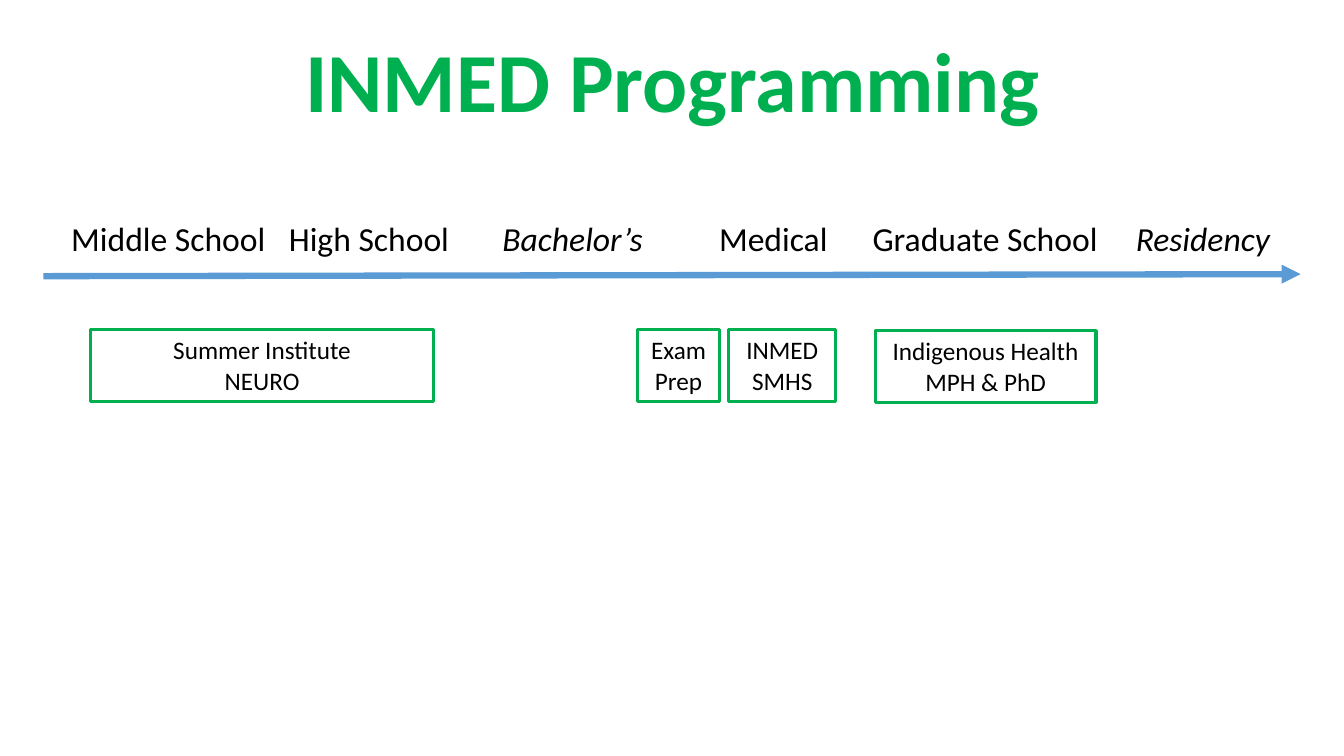
"""Build the INMED programming timeline slide."""
from dataclasses import dataclass

from lxml import etree
from pptx import Presentation
from pptx.dml.color import RGBColor
from pptx.enum.shapes import MSO_CONNECTOR
from pptx.enum.text import MSO_ANCHOR, MSO_AUTO_SIZE, PP_ALIGN
from pptx.oxml.ns import qn
from pptx.util import Inches, Pt

LINE = MSO_CONNECTOR.STRAIGHT
BASE = MSO_ANCHOR.BOTTOM
FIXED, GROW = MSO_AUTO_SIZE.NONE, MSO_AUTO_SIZE.SHAPE_TO_FIT_TEXT
MID = PP_ALIGN.CENTER


@dataclass(frozen=True)
class Theme:
    font: str = "Calibri"
    green: RGBColor = RGBColor(0x00, 0xB0, 0x50)
    blue: RGBColor = RGBColor(0x5B, 0x9B, 0xD5)
    black: RGBColor = RGBColor(0, 0, 0)
    head: Pt = Pt(60)
    stage: Pt = Pt(24)
    label: Pt = Pt(18)


theme = Theme()


def style(frame, size, color, bold=False, slant=False):
    for para in frame.paragraphs:
        para.alignment = MID
        for run in para.runs:
            run.font.name = theme.font
            run.font.size = size
            run.font.color.rgb = color
            run.font.bold = bold
            run.font.italic = slant


def write(text, left, top, width, height):
    box = slide.shapes.add_textbox(
        Inches(left), Inches(top), Inches(width), Inches(height))
    box.text_frame.text = text
    box.text_frame.word_wrap = True
    return box


deck = Presentation()
deck.slide_width, deck.slide_height = Inches(13.33), Inches(7.5)
slide = deck.slides.add_slide(deck.slide_layouts[5])

title = slide.shapes.title
title.left, title.top = Inches(1.67), Inches(0.23)
title.width, title.height = Inches(10), Inches(1.12)
frame = title.text_frame
frame.text = "INMED Programming"
frame.auto_size = FIXED
frame.vertical_anchor = BASE
frame.paragraphs[0].line_spacing = 0.9
style(frame, theme.head, theme.green, bold=True)

stages = [
    ("Middle School", 1.67, False),
    ("High School", 3.66, False),
    ("Bachelor’s", 5.68, True),
    ("Medical", 7.67, False),
    ("Graduate School", 9.77, False),
    ("Residency", 11.93, True),
]
span = 2.5
for name, center, slant in stages:
    frame = write(name, center - span / 2, 2.16, span, 0.5).text_frame
    frame.paragraphs[0].line_spacing = 0.9
    style(frame, theme.stage, theme.black, slant=slant)

programs = [
    ("Summer Institute\nNEURO", 0.9, 3.27, 3.4),
    ("Exam Prep", 6.32, 3.27, 0.82),
    ("INMED\nSMHS", 7.23, 3.27, 1.06),
    ("Indigenous Health MPH & PhD", 8.68, 3.28, 2.19),
]
for text, left, top, width in programs:
    box = write(text, left, top, width, 0.71)
    box.line.color.rgb = theme.green
    box.line.width = Pt(2.25)
    box.text_frame.auto_size = GROW
    style(box.text_frame, theme.label, theme.black)

arrow = slide.shapes.add_connector(
    LINE, Inches(0.43), Inches(2.74), Inches(12.9), Inches(2.72))
arrow.line.color.rgb = theme.blue
arrow.line.width = Pt(4.5)
etree.SubElement(arrow.line._get_or_add_ln(), qn("a:tailEnd"), type="triangle")
etree.SubElement(arrow._element.spPr, qn("a:effectLst"))

deck.save("out.pptx")
